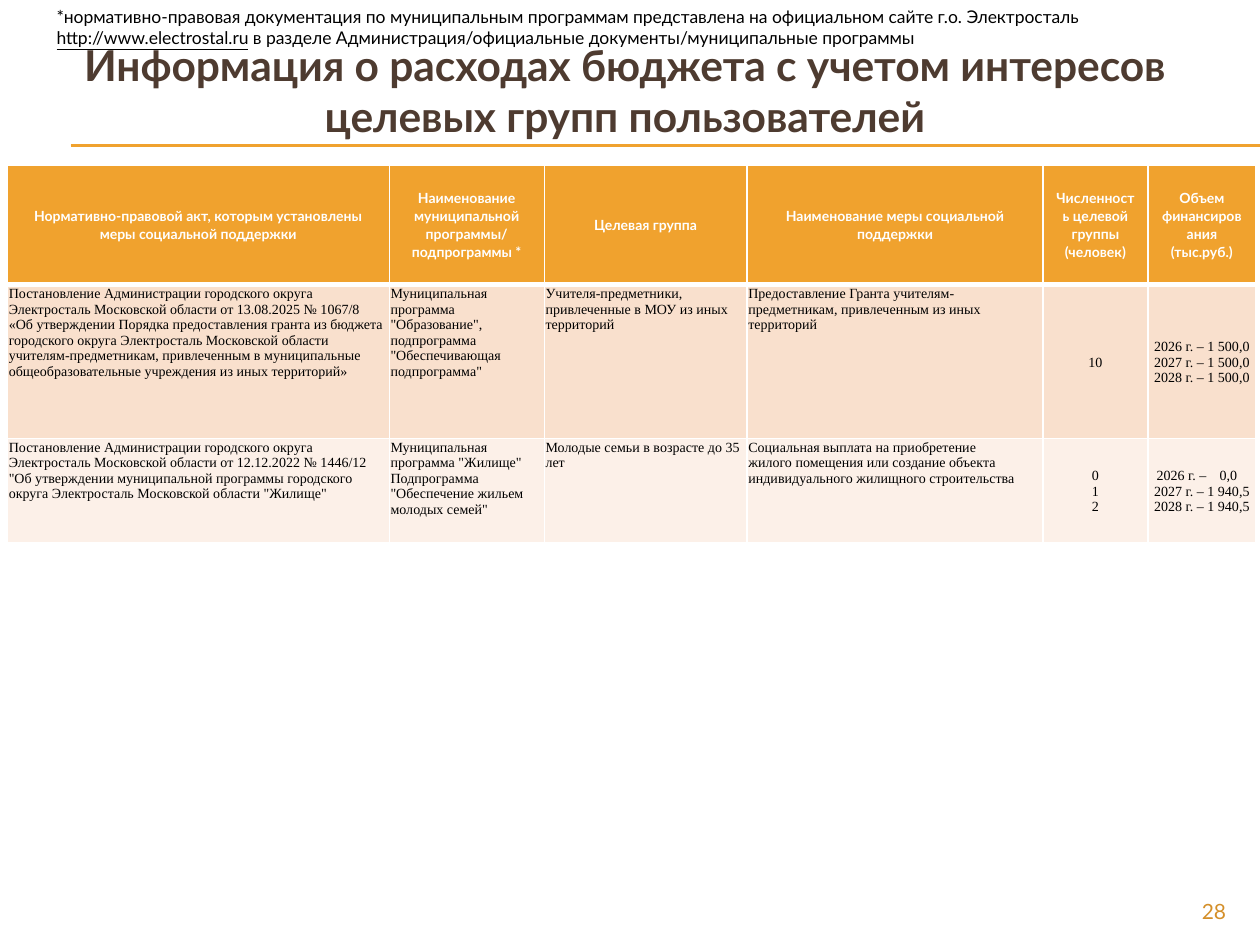
from lxml.etree import SubElement
from pptx import Presentation
from pptx.dml.color import RGBColor
from pptx.enum.shapes import MSO_CONNECTOR as Link
from pptx.enum.text import MSO_ANCHOR as Anchor, MSO_AUTO_SIZE as Fit, PP_ALIGN as Align
from pptx.oxml.ns import qn
from pptx.util import Inches, Pt

GOLD, WHITE, BLACK = "F0A22E", "FFFFFF", "000000"
FILLS = [GOLD, "F9E0CD", "FCF0E8"]
COLS = [3.03, 1.23, 1.61, 2.35, 0.83, 0.86]
ROWS = [0.95, 1.22, 0.83]
HEAD = dict(size=Pt(8), name="Lato", bold=True, color=WHITE)
BODY = dict(size=Pt(8), name="Times New Roman", bold=False, color=BLACK)
NOTE = dict(size=Pt(10), name="Lato", color=BLACK)
SIDES = ["left", "right", "top", "bottom"]

# A line break is \v, a new paragraph is \n.
CELLS = [
    ["Нормативно-правовой акт, которым установлены меры социальной поддержки",
     "Наименование муниципальной программы/ подпрограммы *",
     "Целевая группа",
     "Наименование меры социальной поддержки",
     "Численность целевой группы (человек)",
     "Объем финансирования\n(тыс.руб.)"],
    ["Постановление Администрации городского округа Электросталь Московской "
     "области от 13.08.2025 № 1067/8\v«Об утверждении Порядка предоставления "
     "гранта из бюджета городского округа Электросталь Московской области "
     "учителям-предметникам, привлеченным в муниципальные "
     "общеобразовательные учреждения из иных территорий»",
     'Муниципальная программа "Образование", подпрограмма "Обеспечивающая подпрограмма"',
     "Учителя-предметники, привлеченные в МОУ из иных территорий",
     "Предоставление Гранта учителям-предметникам, привлеченным из иных территорий",
     "10",
     "2026 г. – 1 500,0\n2027 г. – 1 500,0\n2028 г. – 1 500,0"],
    ["Постановление Администрации городского округа Электросталь Московской "
     'области от 12.12.2022 № 1446/12 "Об утверждении муниципальной программы '
     'городского округа Электросталь Московской области "Жилище"',
     'Муниципальная программа "Жилище"\vПодпрограмма "Обеспечение жильем молодых семей"',
     "Молодые семьи в возрасте до 35 лет",
     "Социальная выплата на приобретение\nжилого помещения или создание объекта "
     "индивидуального жилищного строительства",
     "0\n1\n2",
     "2026 г. –\t0,0\n2027 г. – 1 940,5\n2028 г. – 1 940,5"],
]


def tint(code):
    return RGBColor.from_string(code)


class Pen:
    def __init__(self, slide):
        self.slide = slide

    def style(self, run, form):
        for key, val in form.items():
            if key == "color":
                run.font.color.rgb = tint(val)
            else:
                setattr(run.font, key, val)

    def fill(self, frame, text, form, align, space=None):
        """Fill a frame, one paragraph for each line of the text."""
        for i, line in enumerate(text.split("\n")):
            para = frame.add_paragraph() if i else frame.paragraphs[0]
            para.text, para.alignment, para.line_spacing = line, align, space
            for run in para.runs:
                self.style(run, form)
            if "\t" in line:
                self.tab(para)

    def tab(self, para):
        """Indent the line and set its last figure flush right."""
        para.alignment = Align.LEFT
        prop = para._p.get_or_add_pPr()
        prop.set("marL", str(Inches(0.06)))
        prop.set("indent", "0")
        stops = SubElement(prop, qn("a:tabLst"))
        SubElement(stops, qn("a:tab"), pos=str(Inches(0.74)), algn="r")

    def text(self, box, text, form, align=Align.LEFT, anchor=Anchor.TOP, fit=Fit.NONE):
        frame = self.slide.shapes.add_textbox(*map(Inches, box)).text_frame
        frame.word_wrap, frame.auto_size, frame.vertical_anchor = True, fit, anchor
        self.fill(frame, text, form, align)
        return frame.paragraphs[0]

    def add(self, para, text, form):
        run = para.add_run()
        run.text = text
        self.style(run, form)

    def line(self, x1, x2, y):
        rule = self.slide.shapes.add_connector(Link.STRAIGHT, *map(Inches, (x1, y, x2, y)))
        rule.line.color.rgb, rule.line.width = tint(GOLD), Pt(0.75)
        SubElement(rule._element.spPr, qn("a:effectLst"))

    def edge(self, cell, widths):
        """Draw white borders; widths maps each side to points."""
        prop = cell._tc.get_or_add_tcPr()
        for i, (side, width) in enumerate(widths.items()):
            edge = prop.makeelement(qn("a:ln" + side), {"w": str(Pt(width))})
            fill = SubElement(edge, qn("a:solidFill"))
            SubElement(fill, qn("a:srgbClr"), val=WHITE)
            prop.insert(i, edge)

    def cell(self, cell, text, row, col):
        head, mid = row == 0, row == 0 or col > 3
        cell.fill.solid()
        cell.fill.fore_color.rgb = tint(FILLS[row])
        cell.vertical_anchor = Anchor.MIDDLE if mid else Anchor.TOP
        if not head:
            for side in SIDES:
                setattr(cell, "margin_" + side, Inches(0 if side == "bottom" else 0.01))
        self.fill(cell.text_frame, text, HEAD if head else BODY,
                  Align.CENTER if mid else Align.LEFT, 1.07 if head else None)
        self.edge(cell, dict(L=1, R=1, T=3 if row == 1 else 1, B=3 if head else 1))

    def table(self, x, y):
        size = map(Inches, (x, y, sum(COLS), sum(ROWS)))
        grid = self.slide.shapes.add_table(len(ROWS), len(COLS), *size).table
        for col, width in zip(grid.columns, COLS):
            col.width = Inches(width)
        for row, height in zip(grid.rows, ROWS):
            row.height = Inches(height)
        for r, texts in enumerate(CELLS):
            for c, text in enumerate(texts):
                self.cell(grid.cell(r, c), text, r, c)


def main():
    deck = Presentation()
    deck.slide_width, deck.slide_height = Inches(10), Inches(7.5)
    pen = Pen(deck.slides.add_slide(deck.slide_layouts[6]))
    for y in (1.15, 1.16):
        pen.line(0.56, 10, y)
    pen.table(0.06, 1.31)
    pen.text((0.31, 0.29, 9.3, 0.85),
             "Информация о расходах бюджета с учетом интересов целевых групп пользователей",
             dict(size=Pt(24.3), name="Lato", bold=True, color="4E3B30"),
             Align.CENTER, Anchor.MIDDLE)
    pen.text((9, 7.08, 0.83, 0.27), "28",
             dict(size=Pt(12), name="Lato", color="D48F29"), Align.RIGHT)
    note = pen.text((0.35, 0, 9.65, 0.44),
                    "*нормативно-правовая документация по муниципальным программам "
                    "представлена на официальном сайте г.о. Электросталь ",
                    NOTE, fit=Fit.SHAPE_TO_FIT_TEXT)
    pen.add(note, "http://www.electrostal.ru", {**NOTE, "underline": True})
    pen.add(note, " в разделе Администрация/официальные документы/муниципальные программы", NOTE)
    deck.save("out.pptx")


if __name__ == "__main__":
    main()
